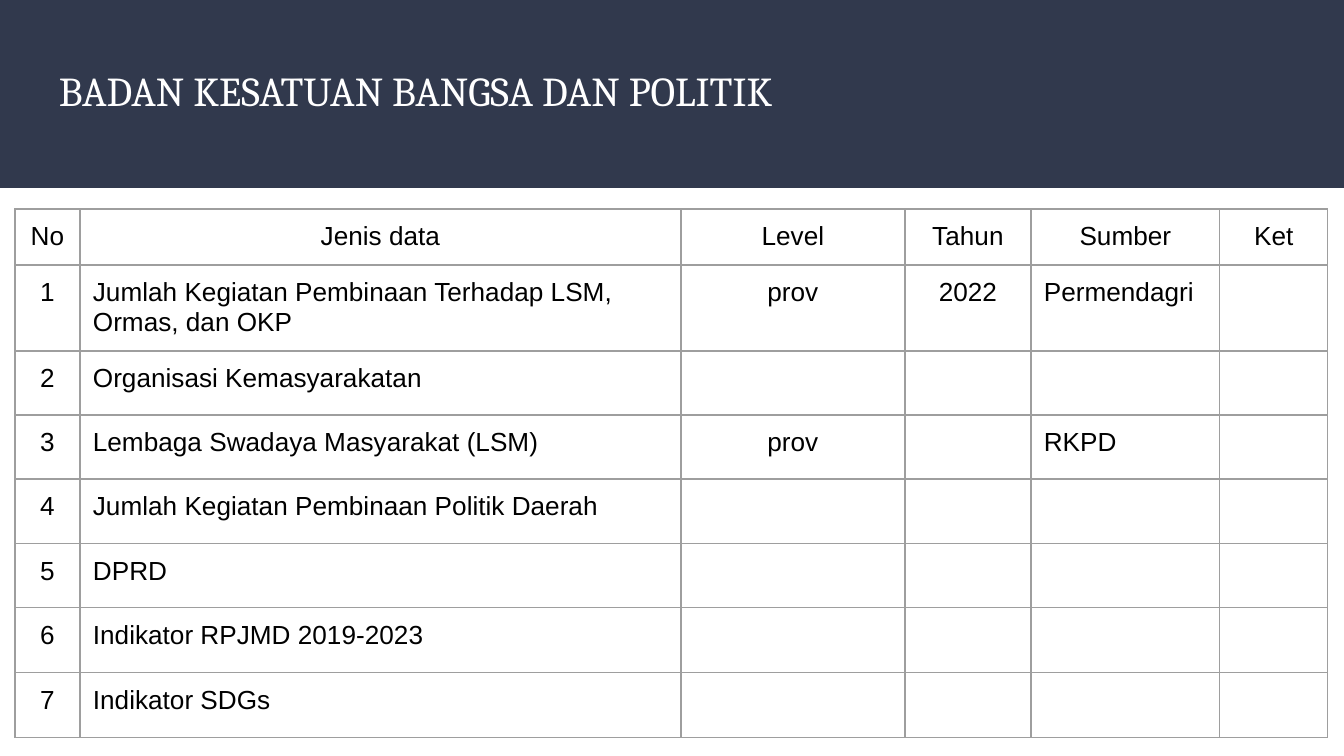
from dataclasses import dataclass

from lxml import etree
from pptx import Presentation
from pptx.dml.color import RGBColor
from pptx.enum.shapes import MSO_SHAPE
from pptx.enum.text import MSO_ANCHOR, MSO_AUTO_SIZE, PP_ALIGN
from pptx.oxml.ns import qn
from pptx.util import Emu, Pt

LEFT, MID = PP_ALIGN.LEFT, PP_ALIGN.CENTER
TOP = MSO_ANCHOR.TOP
RECT = MSO_SHAPE.RECTANGLE
NO_FIT = MSO_AUTO_SIZE.NONE

SCALE = 914400 / 134.4  # EMU in one px
INSET = 13
COLOR = {"band": "31394D", "title": "FFFFFF", "text": "000000", "grid": "9E9E9E"}


@dataclass
class Column:
    head: str
    width: int
    align: PP_ALIGN = MID


@dataclass
class Entry:
    kind: str
    level: str = ""
    year: str = ""
    source: str = ""
    note: str = ""
    height: int = 64


COLUMNS = [
    Column("No", 65),
    Column("Jenis data", 601, LEFT),
    Column("Level", 224),
    Column("Tahun", 126),
    Column("Sumber", 189, LEFT),
    Column("Ket", 108),
]
ENTRIES = [
    Entry("Jumlah Kegiatan Pembinaan Terhadap LSM, Ormas, dan OKP",
          "prov", "2022", "Permendagri", height=86),
    Entry("Organisasi Kemasyarakatan"),
    Entry("Lembaga Swadaya Masyarakat (LSM)", "prov", source="RKPD"),
    Entry("Jumlah Kegiatan Pembinaan Politik Daerah", height=65),
    Entry("DPRD"),
    Entry("Indikator RPJMD 2019-2023", height=65),
    Entry("Indikator SDGs", height=65),
]
HEAD_HEIGHT = 56


def px(size: int) -> Emu:
    return Emu(round(size * SCALE))


def put(frame, text: str, *, size: int = 14, font: str = "Arial",
        color: str = "text", align: PP_ALIGN = LEFT) -> None:
    par = frame.paragraphs[0]
    par.alignment = align
    run = par.add_run()
    run.text = text
    run.font.size = Pt(size)
    run.font.name = font
    run.font.bold = False
    run.font.color.rgb = RGBColor.from_string(COLOR[color])


def pad(box, size: int) -> None:
    box.margin_left = box.margin_right = px(size)
    box.margin_top = box.margin_bottom = px(size)


def frame_cell(cell) -> None:
    props = cell._tc.get_or_add_tcPr()
    for side in ("a:lnL", "a:lnR", "a:lnT", "a:lnB"):
        line = etree.SubElement(props, qn(side), w=str(Pt(0.75)))
        fill = etree.SubElement(line, qn("a:solidFill"))
        etree.SubElement(fill, qn("a:srgbClr"), val=COLOR["grid"])
    cell.fill.background()


def draw_title(slide, text: str) -> None:
    title = slide.shapes.title
    title.left, title.top, title.width, title.height = map(px, (46, 52, 1252, 92))
    frame = title.text_frame
    frame.auto_size = NO_FIT
    frame.word_wrap = True
    frame.vertical_anchor = TOP
    pad(frame, INSET)
    put(frame, text, size=22, font="Cambria", color="title")


def draw_band(slide) -> None:
    band = slide.shapes.add_shape(RECT, 0, 0, px(1344), px(188))
    band.shadow.inherit = False
    band.fill.solid()
    band.fill.fore_color.rgb = RGBColor.from_string(COLOR["band"])
    band.line.fill.background()
    slide.shapes.title.element.addprevious(band.element)  # behind the title


def draw_table(slide, left: int, top: int) -> None:
    heights = [HEAD_HEIGHT] + [entry.height for entry in ENTRIES]
    widths = [col.width for col in COLUMNS]
    table = slide.shapes.add_table(
        len(heights), len(widths), px(left), px(top),
        px(sum(widths)), px(sum(heights))).table
    table.first_row = table.horz_banding = False
    for row, height in zip(table.rows, heights):
        row.height = px(height)
    for col, width in zip(table.columns, widths):
        col.width = px(width)

    # Header, then numbered entries
    grid = [[col.head for col in COLUMNS]]
    for num, item in enumerate(ENTRIES, 1):
        grid.append([str(num), item.kind, item.level, item.year, item.source, item.note])
    for r, line in enumerate(grid):
        for c, text in enumerate(line):
            cell = table.cell(r, c)
            frame_cell(cell)
            # No padding in empty cells, so that they do not stretch the row
            pad(cell, INSET if text else 0)
            if text:
                put(cell.text_frame, text, align=COLUMNS[c].align if r else MID)


def main() -> None:
    deck = Presentation()
    deck.slide_width, deck.slide_height = px(1344), px(756)
    slide = deck.slides.add_slide(deck.slide_layouts[5])
    draw_title(slide, "BADAN KESATUAN BANGSA DAN POLITIK")
    draw_band(slide)
    draw_table(slide, 15, 209)
    deck.save("out.pptx")


if __name__ == "__main__":
    main()
